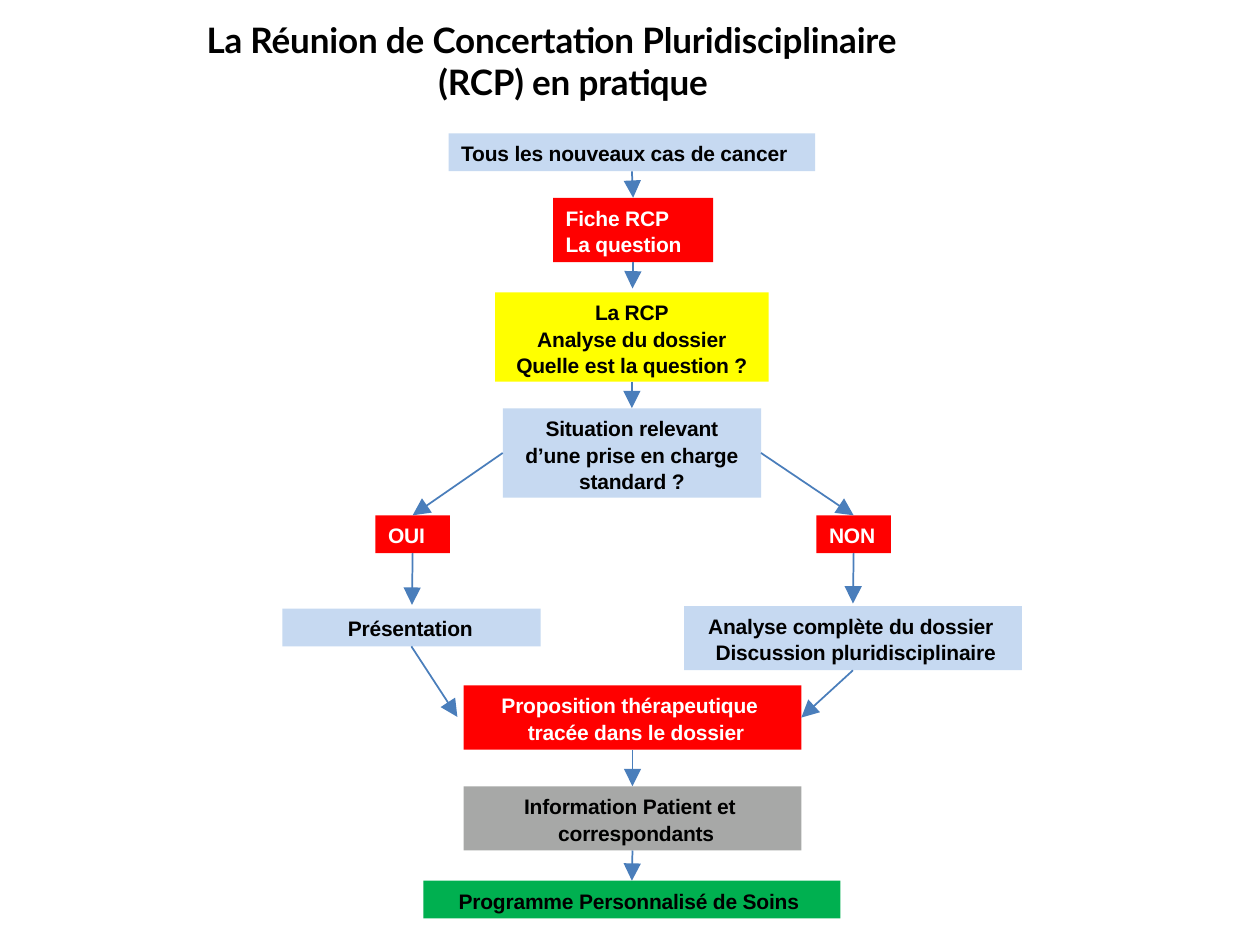
from dataclasses import dataclass
from typing import Optional

import lxml.etree
import pptx
import pptx.dml.color
import pptx.enum.shapes
import pptx.enum.text
import pptx.oxml.ns
import pptx.util

Inches = pptx.util.Inches
ALIGN = pptx.enum.text.PP_ALIGN
COLOURS = {"black": "000000", "white": "FFFFFF", "blue": "C6D9F1", "red": "FF0000",
           "yellow": "FFFF00", "grey": "A7A8A7", "green": "00B050", "arrow": "4A7EBB"}
TOP, LEFT, BOTTOM, RIGHT = range(4)


@dataclass
class Step:
    name: str
    left: float
    top: float
    width: float
    height: float
    fill: str
    lines: list[str]
    margin: float = 0.1
    first_indent: float = 0
    centred: bool = False
    ink: str = "black"


@dataclass
class Arrow:
    start: str
    start_side: int
    target: Optional[str] = None
    target_side: int = TOP
    tip: tuple[float, float] = (0, 0)  # free end, used when there is no target


STEPS = [
    Step("cases", 3.56, 1.06, 2.91, 0.3, "blue", ["Tous les nouveaux cas de cancer"]),
    Step("form", 4.39, 1.57, 1.27, 0.51, "red", ["Fiche RCP", "La question"], ink="white"),
    Step("meeting", 3.93, 2.32, 2.17, 0.71, "yellow",
         ["La RCP", "Analyse du dossier", "Quelle est la question ?"], 0, centred=True),
    Step("standard", 3.99, 3.24, 2.05, 0.71, "blue",
         ["Situation relevant", "d’une prise en charge", "standard ?"], 0, centred=True),
    Step("yes", 2.98, 4.09, 0.59, 0.3, "red", ["OUI"], ink="white"),
    Step("presentation", 2.24, 4.83, 2.05, 0.3, "blue", ["Présentation"], 0.52),
    Step("no", 6.48, 4.09, 0.59, 0.3, "red", ["NON"], ink="white"),
    Step("analysis", 5.43, 4.81, 2.68, 0.51, "blue",
         ["Analyse complète du dossier", "Discussion pluridisciplinaire"], 0.25, -0.06),
    Step("proposal", 3.68, 5.44, 2.68, 0.51, "red",
         ["Proposition thérapeutique", "tracée dans le dossier"], 0.51, -0.21, ink="white"),
    Step("information", 3.68, 6.24, 2.68, 0.51, "grey",
         ["Information Patient et", "correspondants"], 0.75, -0.27),
    Step("programme", 3.36, 6.99, 3.31, 0.3, "green",
         ["Programme Personnalisé de Soins"], 0.28),
]

ARROWS = [
    Arrow("cases", BOTTOM, "form"),
    Arrow("form", BOTTOM, tip=(5.02, 2.29)),
    Arrow("meeting", BOTTOM, "standard"),
    Arrow("standard", LEFT, "yes"),
    Arrow("standard", RIGHT, "no"),
    Arrow("yes", BOTTOM, tip=(3.27, 4.8)),
    Arrow("no", BOTTOM, tip=(6.77, 4.79)),
    Arrow("presentation", BOTTOM, tip=(3.63, 5.69)),
    Arrow("analysis", BOTTOM, "proposal", RIGHT),
    Arrow("proposal", BOTTOM, "information"),
    Arrow("information", BOTTOM, "programme"),
]


def colour(name: str) -> pptx.dml.color.RGBColor:
    return pptx.dml.color.RGBColor.from_string(COLOURS[name])


def write_lines(shape, lines: list[str], font_name: str, size: float, ink: str,
                margin: float, first_indent: float, centred: bool,
                top_inset: float, line_spacing: float) -> None:
    """Write one paragraph of bold text, broken into the given lines."""
    frame = shape.text_frame
    frame.word_wrap = True
    frame.vertical_anchor = pptx.enum.text.MSO_ANCHOR.TOP
    frame.margin_left = frame.margin_right = frame.margin_bottom = 0
    frame.margin_top = Inches(top_inset)
    paragraph = frame.paragraphs[0]
    paragraph.alignment = ALIGN.CENTER if centred else ALIGN.LEFT
    paragraph.line_spacing = line_spacing
    properties = paragraph._p.get_or_add_pPr()
    properties.set("marL", str(Inches(margin)))
    properties.set("indent", str(Inches(first_indent)))
    for number, line in enumerate(lines):
        if number:
            paragraph.add_line_break()
        run = paragraph.add_run()
        run.text = line
        run.font.name = font_name
        run.font.size = pptx.util.Pt(size)
        run.font.bold = True
        run.font.color.rgb = colour(ink)
        run._r.get_or_add_rPr().set("spc", "-10")


def draw_step(slide, step: Step):
    shape = slide.shapes.add_shape(
        pptx.enum.shapes.MSO_SHAPE.RECTANGLE, Inches(step.left), Inches(step.top),
        Inches(step.width), Inches(step.height))
    shape.shadow.inherit = False
    shape.fill.solid()
    shape.fill.fore_color.rgb = colour(step.fill)
    shape.line.fill.background()
    write_lines(shape, step.lines, "Arial", 12, step.ink, step.margin,
                step.first_indent, step.centred, 0.05, 1.05)
    return shape


def draw_arrow(slide, arrow: Arrow, boxes: dict) -> None:
    x, y = (Inches(value) for value in arrow.tip)
    connector = slide.shapes.add_connector(
        pptx.enum.shapes.MSO_CONNECTOR.STRAIGHT, x, y, x, y)
    connector.begin_connect(boxes[arrow.start], arrow.start_side)
    if arrow.target:
        connector.end_connect(boxes[arrow.target], arrow.target_side)
    connector.line.color.rgb = colour("arrow")
    connector.line.width = pptx.util.Pt(1)
    # Arrowhead and no shadow
    qn = pptx.oxml.ns.qn
    lxml.etree.SubElement(connector.line._get_or_add_ln(), qn("a:tailEnd"),
                          type="triangle", w="lg", len="lg")
    lxml.etree.SubElement(connector._element.spPr, qn("a:effectLst"))


def main() -> None:
    presentation = pptx.Presentation()
    presentation.slide_width = Inches(10)
    presentation.slide_height = Inches(7.5)
    slide = presentation.slides.add_slide(presentation.slide_layouts[6])

    # Title
    title = slide.shapes.add_textbox(Inches(1.62), Inches(0.13), Inches(6.3), Inches(0.7))
    write_lines(title, ["La Réunion de Concertation Pluridisciplinaire", "(RCP) en pratique"],
                "Lato", 20, "black", 1.86, -1.84, False, 0.02, 1)

    # Flow chart
    boxes = {step.name: draw_step(slide, step) for step in STEPS}
    for arrow in ARROWS:
        draw_arrow(slide, arrow, boxes)

    presentation.save("out.pptx")


if __name__ == "__main__":
    main()
